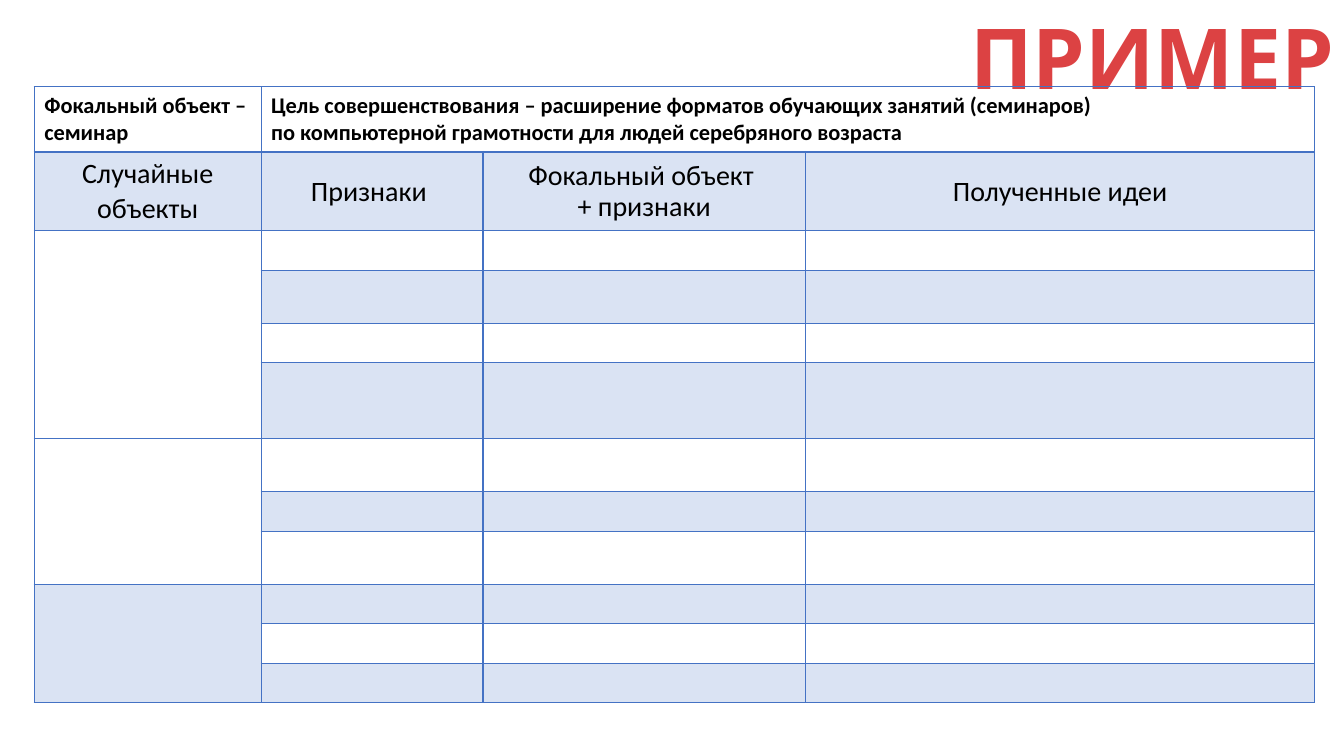
import pptx
import pptx.util
import pptx.dml.color
import pptx.enum.text
import pptx.oxml
import pptx.oxml.ns

Inches = pptx.util.Inches
Pt = pptx.util.Pt
ALIGN = pptx.enum.text.PP_ALIGN
MIDDLE = pptx.enum.text.MSO_ANCHOR.MIDDLE

BLUE = "4472C4"
BAND = "DAE3F3"
WIDTHS = [2.25, 2.2, 3.2, 5.05]
HEIGHTS = [0.65, 0.78, 0.39, 0.53, 0.39, 0.75, 0.53, 0.39, 0.53, 0.39, 0.39, 0.39]
MERGES = [(0, 1, 0, 3), (2, 0, 5, 0), (6, 0, 8, 0), (9, 0, 11, 0)]
GOALS = [
    "Фокальный объект – семинар",
    "Цель совершенствования – расширение форматов обучающих занятий (семинаров)\n"
    "по компьютерной грамотности для людей серебряного возраста",
]
HEADS = [
    ["Случайные объекты"],
    ["Признаки "],
    ["Фокальный объект ", "+ признаки"],
    ["Полученные идеи"],
]


def color(code):
    return pptx.dml.color.RGBColor.from_string(code)


def write(para, text, size=16, font="Calibri", ink="000000", bold=False,
          align=ALIGN.LEFT, space=None):
    para.alignment = align
    if space:
        para.line_spacing = space
    for count, line in enumerate(text.split("\n")):
        if count:
            para.add_line_break()
        run = para.add_run()
        run.text = line
        run.font.size = Pt(size)
        run.font.name = font
        run.font.bold = bold
        run.font.color.rgb = color(ink)


def add_title(slide, text):
    box = slide.shapes.add_textbox(Inches(1.83), Inches(0.1), Inches(11.5), Inches(1.03))
    frame = box.text_frame
    frame.word_wrap = True
    frame.vertical_anchor = MIDDLE
    write(frame.paragraphs[0], text, size=60, font="Karla", ink="DC4243",
          bold=True, align=ALIGN.RIGHT, space=0.9)


def set_edges(cell, top, bottom):
    props = cell._tc.get_or_add_tcPr()
    space = pptx.oxml.ns.nsdecls("a")
    for place, (side, width) in enumerate(zip("LRTB", [1, 1, top, bottom])):
        line = pptx.oxml.parse_xml(
            f'<a:ln{side} {space} w="{Pt(width)}"><a:solidFill>'
            f'<a:srgbClr val="{BLUE}"/></a:solidFill></a:ln{side}>')
        props.insert(place, line)


def style_cell(cell, row):
    if row % 2:
        cell.fill.solid()
        cell.fill.fore_color.rgb = color(BAND)
    else:
        cell.fill.background()
    if row > 1:
        cell.margin_top = cell.margin_bottom = 0
    set_edges(cell, 2 if row == 1 else 1, 2 if row == 0 else 1)


def add_grid(slide):
    shape = slide.shapes.add_table(
        len(HEIGHTS), len(WIDTHS), Inches(0.34), Inches(0.86),
        Inches(sum(WIDTHS)), Inches(sum(HEIGHTS)))
    table = shape.table
    table.first_row = table.horz_banding = False
    for column, width in zip(table.columns, WIDTHS):
        column.width = Inches(width)
    for index, (row, height) in enumerate(zip(table.rows, HEIGHTS)):
        row.height = Inches(height)
        for cell in row.cells:
            style_cell(cell, index)
    for top, left, bottom, right in MERGES:
        table.cell(top, left).merge(table.cell(bottom, right))
    return table


def fill_heads(table):
    for index, text in enumerate(GOALS):
        write(table.cell(0, index).text_frame.paragraphs[0], text, bold=True)
    for index, lines in enumerate(HEADS):
        cell = table.cell(1, index)
        cell.vertical_anchor = MIDDLE
        frame = cell.text_frame
        for count, text in enumerate(lines):
            para = frame.add_paragraph() if count else frame.paragraphs[0]
            write(para, text, size=20, align=ALIGN.CENTER,
                  space=0.9 if len(lines) > 1 else None)


def main():
    deck = pptx.Presentation()
    deck.slide_width = Inches(13.33)
    deck.slide_height = Inches(7.5)
    slide = deck.slides.add_slide(deck.slide_layouts[6])
    add_title(slide, "ПРИМЕР")
    fill_heads(add_grid(slide))
    deck.save("out.pptx")


if __name__ == "__main__":
    main()
